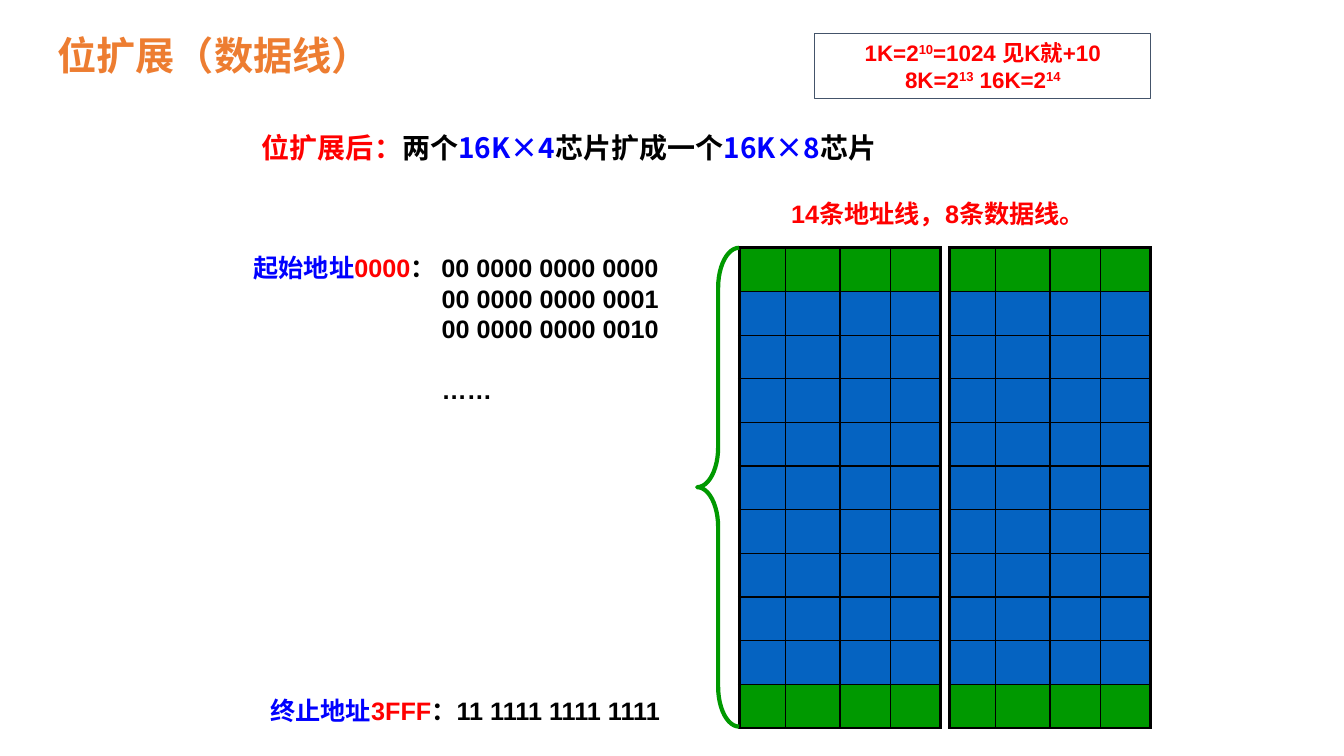
import pptx
import pptx.util
import pptx.dml.color
import pptx.enum.shapes
import pptx.enum.text
import pptx.oxml
from pptx.oxml.ns import nsdecls, qn

Pt = pptx.util.Pt
COLORS = {
    "red": "FF0000", "blue": "0000FF", "black": "000000", "white": "FFFFFF",
    "orange": "ED7D31", "green": "009900", "cell": "0563C1", "slate": "44546A",
}
CJK_FONT = "Noto Sans CJK SC"
COLUMN_WIDTHS = [33, 39, 36, 36]
ROW_COUNT = 11
ROW_HEIGHT = 31.2
MEMORY_TOP = 177
SUPERSCRIPT = "30000"


def rgb(name):
    return pptx.dml.color.RGBColor.from_string(COLORS[name])


def write_text(frame, paragraphs, size=18, font="Arial", align="LEFT",
               anchor="TOP", wrap=True, indent=0, last_gap=0):
    frame.word_wrap = wrap
    frame.auto_size = pptx.enum.text.MSO_AUTO_SIZE.SHAPE_TO_FIT_TEXT
    frame.vertical_anchor = pptx.enum.text.MSO_ANCHOR[anchor]
    for index, runs in enumerate(paragraphs):
        paragraph = frame.paragraphs[0] if index == 0 else frame.add_paragraph()
        paragraph.alignment = pptx.enum.text.PP_ALIGN[align]
        if index and indent:
            paragraph._p.get_or_add_pPr().set("marL", str(Pt(indent)))
        if last_gap and index == len(paragraphs) - 1:
            paragraph.space_before = Pt(last_gap)
        for text, color, *baseline in runs:
            run = paragraph.add_run()
            run.text = text
            run.font.size = Pt(size)
            run.font.bold = True
            run.font.name = font
            run.font.color.rgb = rgb(color)
            properties = run.font._element
            properties.find(qn("a:latin")).addnext(pptx.oxml.parse_xml(
                f'<a:ea {nsdecls("a")} typeface="{CJK_FONT}"/>'))
            if baseline:
                properties.set("baseline", baseline[0])


def add_label(slide, left, top, width, height, paragraphs, **text_format):
    label = slide.shapes.add_textbox(Pt(left), Pt(top), Pt(width), Pt(height))
    write_text(label.text_frame, paragraphs, **text_format)


def set_border(cell, side, width):
    cell._tc.get_or_add_tcPr().append(pptx.oxml.parse_xml(
        f'<a:ln{side} {nsdecls("a")} w="{Pt(width)}"><a:solidFill>'
        f'<a:srgbClr val="{COLORS["black"]}"/></a:solidFill></a:ln{side}>'))


def add_memory_chip(slide, left):
    column_count = len(COLUMN_WIDTHS)
    chip = slide.shapes.add_table(
        ROW_COUNT, column_count, Pt(left), Pt(MEMORY_TOP),
        Pt(sum(COLUMN_WIDTHS)), Pt(ROW_COUNT * ROW_HEIGHT)).table
    chip.first_row = False
    chip.horz_banding = False
    for column, width in zip(chip.columns, COLUMN_WIDTHS):
        column.width = Pt(width)
    for r, row in enumerate(chip.rows):
        row.height = Pt(ROW_HEIGHT)
        for c, cell in enumerate(row.cells):
            outer_edges = {"L": c == 0, "R": c == column_count - 1,
                           "T": r == 0, "B": r == ROW_COUNT - 1}
            for side, outer in outer_edges.items():
                set_border(cell, side, 2.25 if outer else 1)
            cell.fill.solid()
            cell.fill.fore_color.rgb = rgb(
                "green" if r in (0, ROW_COUNT - 1) else "cell")


def add_address_brace(slide):
    brace = slide.shapes.add_shape(
        pptx.enum.shapes.MSO_SHAPE.LEFT_BRACE,
        Pt(498), Pt(MEMORY_TOP), Pt(30), Pt(342))
    brace.adjustments[0] = 0.95
    brace.adjustments[1] = 0.5
    brace.shadow.inherit = False
    brace.fill.background()
    brace.line.color.rgb = rgb("green")
    brace.line.width = Pt(3)


def add_hint_box(slide, paragraphs):
    hint = slide.shapes.add_shape(
        pptx.enum.shapes.MSO_SHAPE.RECTANGLE, Pt(582), Pt(24), Pt(240), Pt(46.5))
    hint.shadow.inherit = False
    hint.fill.solid()
    hint.fill.fore_color.rgb = rgb("white")
    hint.line.color.rgb = rgb("slate")
    hint.line.width = Pt(0.75)
    write_text(hint.text_frame, paragraphs, size=16, align="CENTER",
               anchor="MIDDLE")


def main():
    presentation = pptx.Presentation()
    presentation.slide_width = Pt(960)
    presentation.slide_height = Pt(540)
    slide = presentation.slides.add_slide(presentation.slide_layouts[6])

    add_memory_chip(slide, 528)
    add_label(slide, 174, MEMORY_TOP, 354, 115, [
        [("起始地址", "blue"), ("0000", "red"),
         ("： 00 0000 0000 0000", "black")],
        [("00 0000 0000 0001", "black")],
        [("00 0000 0000 0010", "black")],
        [("……", "black")],
    ], indent=134.4, last_gap=22)
    add_label(slide, 186, 493, 372, 29, [
        [("终止地址", "blue"), ("3FFF", "red"),
         ("：11 1111 1111 1111", "black")],
    ])
    add_label(slide, 180, 90, 498, 32, [
        [("位扩展后：", "red"), ("两个", "black"), ("16K×4", "blue"),
         ("芯片扩成一个", "black"), ("16K×8", "blue"), ("芯片", "black")],
    ], size=20, font=CJK_FONT)
    add_address_brace(slide)
    add_memory_chip(slide, 678)
    add_label(slide, 558, 138, 230, 29,
              [[("14条地址线，8条数据线。", "red")]], wrap=False)
    add_label(slide, 34, 19, 402, 41, [[("位扩展（数据线）", "orange")]],
              size=28, font="Times New Roman")
    add_hint_box(slide, [
        [("1K=2", "red"), ("10", "red", SUPERSCRIPT),
         ("=1024 见K就+10", "red")],
        [("8K=2", "red"), ("13", "red", SUPERSCRIPT),
         (" 16K=2", "red"), ("14", "red", SUPERSCRIPT)],
    ])
    presentation.save("out.pptx")


if __name__ == "__main__":
    main()
